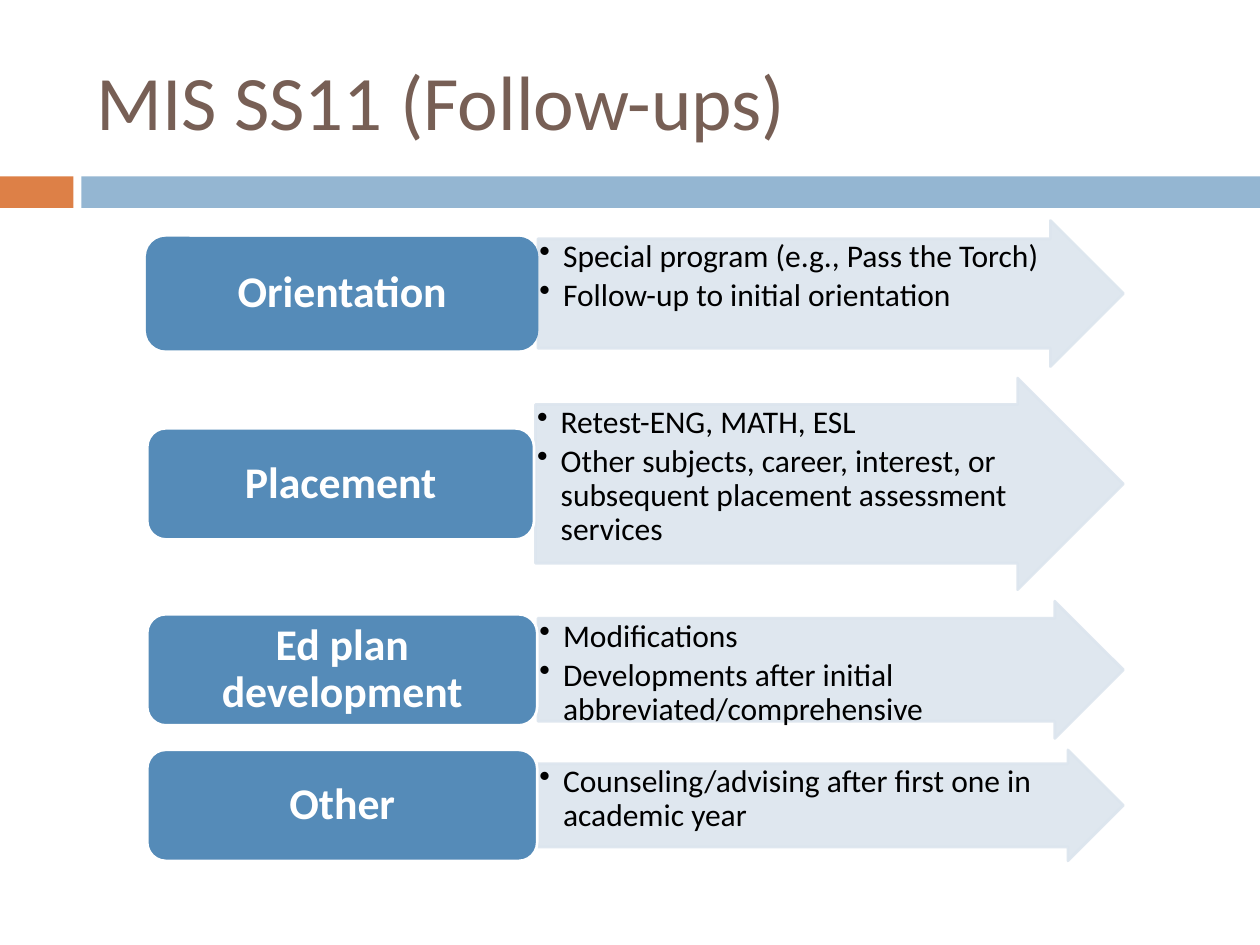
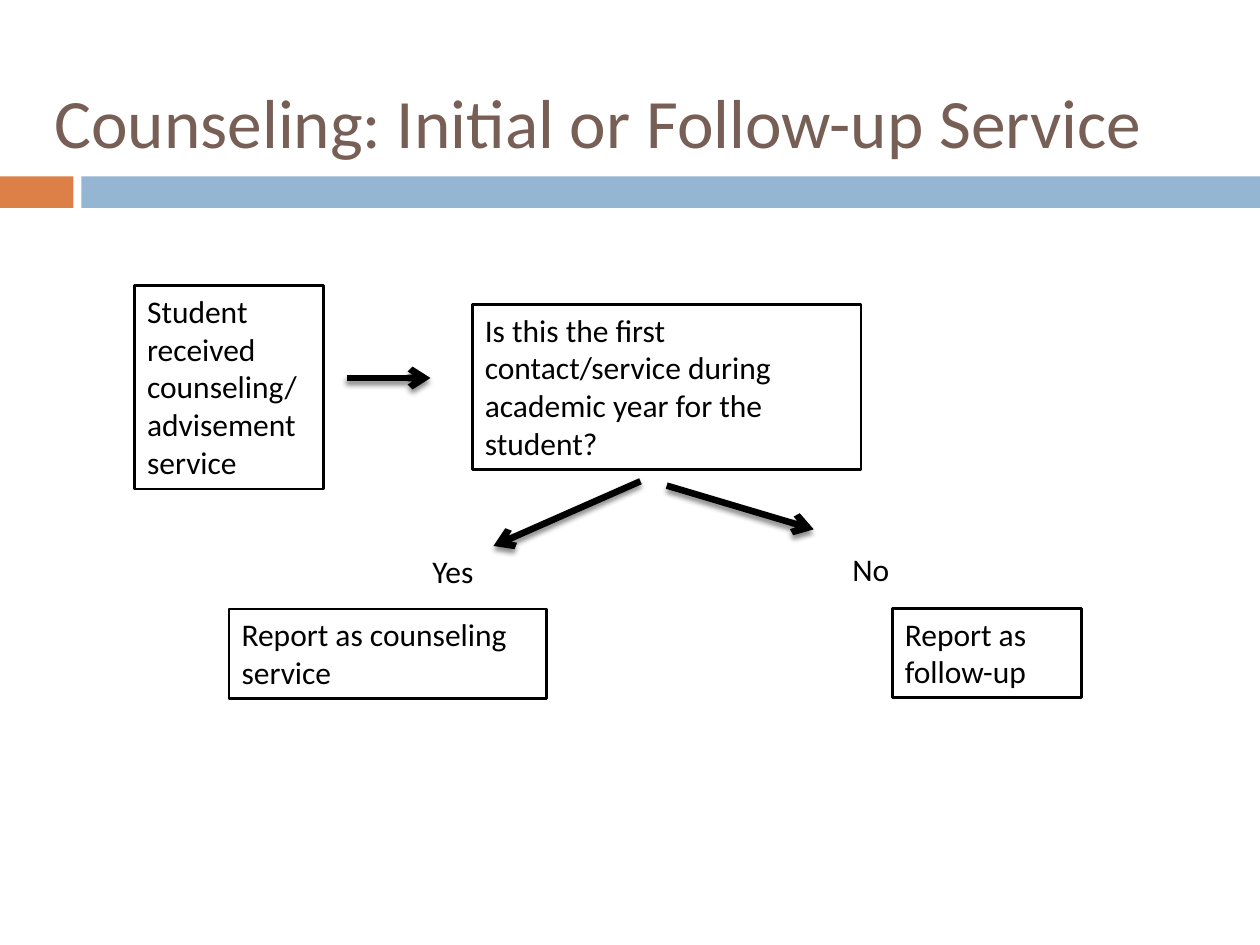
from lxml.etree import SubElement
from pptx import Presentation
from pptx.dml.color import RGBColor
from pptx.enum.shapes import MSO_CONNECTOR as Connector, MSO_SHAPE as Shape
from pptx.enum.text import MSO_ANCHOR as Anchor, PP_ALIGN as Align
from pptx.oxml.ns import qn
from pptx.util import Pt

FONT = "Calibri"
COLORS = {
    "title": "775F55", "accent": "DD8047", "band": "94B6D2",
    "label": "558BB8", "arrow": "DCE5EE", "white": "FFFFFF", "black": "000000",
}
TITLE = {"size": 44, "color": "title"}
BODY = {"size": 18, "color": "black"}
LABEL = {"size": 25, "color": "white", "bold": True}

ROW_LEFT, ROW_RIGHT, ROW_TOP, ROW_GAP = 84.2, 642, 126, 6.5
LABEL_HEIGHT = 63.4
# label, label width, label outline, arrow left, arrow height, details
FOLLOW_UPS = [
    ("Orientation", 222.7, "label", 307.4, 83.5,
     ["Special program (e.g., Pass the Torch)", "Follow-up to initial orientation"]),
    ("Placement", 221, "white", 306, 121,
     ["Retest-ENG, MATH, ESL",
      "Other subjects, career, interest, or subsequent placement assessment services"]),
    ("Ed plan development", 222.8, "white", 307.4, 78.5,
     ["Modifications", "Developments after initial abbreviated/comprehensive"]),
    ("Other", 222.8, "white", 307.4, 63.4,
     ["Counseling/advising after first one in academic year"]),
]
# box in points, paragraphs
DECISION_BOXES = [
    ((77, 163.2, 108, 116.4), ["Student received counseling/", "advisement service"]),
    ((270, 174, 222, 94.5),
     ["Is this the first contact/service during academic year for the student?"]),
    ((131, 348, 181.2, 51), ["Report as counseling service"]),
    ((510, 347.6, 108, 51), ["Report as follow-up"]),
]
ANSWERS = [((240, 312, 84, 29), "Yes"), ((480, 311, 84, 29), "No")]
FLOW_ARROWS = [(198, 216, 246, 216), (366, 275, 282, 312), (381, 277.5, 465, 302.5)]


def color(name):
    return RGBColor.from_string(COLORS[name])


def set_attributes(target, values):
    for name, value in values.items():
        setattr(target, name, value)


def write(shape, texts, style, inset=(7.2, 3.6), anchor=Anchor.TOP, **paragraph_format):
    """Fill a shape with paragraphs of one style and return them."""
    frame = shape.text_frame
    across, down = map(Pt, inset)
    set_attributes(frame, {
        "word_wrap": True, "vertical_anchor": anchor,
        "margin_left": across, "margin_right": across,
        "margin_top": down, "margin_bottom": down,
    })
    for index, text in enumerate(texts):
        paragraph = frame.paragraphs[0] if index == 0 else frame.add_paragraph()
        set_attributes(paragraph, {"alignment": Align.LEFT, **paragraph_format})
        run = paragraph.add_run()
        run.text = text
        set_attributes(run.font, {
            "name": FONT, "size": Pt(style["size"]), "bold": style.get("bold", False)})
        run.font.color.rgb = color(style["color"])
    return frame.paragraphs


def add_block(slide, kind, box, fill, outline=None):
    shape = slide.shapes.add_shape(kind, *map(Pt, box))
    shape.shadow.inherit = False
    shape.fill.solid()
    shape.fill.fore_color.rgb = color(fill)
    if outline:
        shape.line.color.rgb = color(outline)
        shape.line.width = Pt(1.5)
    else:
        shape.line.fill.background()
    return shape


def add_text(slide, box, text, style, **options):
    write(slide.shapes.add_textbox(*map(Pt, box)), [text], style, **options)


def add_titled_slide(presentation, title, box, size=44):
    """Blank slide with the two-part band and a title above it."""
    slide = presentation.slides.add_slide(presentation.slide_layouts[6])
    add_block(slide, Shape.RECTANGLE, (0, 100.8, 42, 18), "accent")
    add_block(slide, Shape.RECTANGLE, (46.5, 100.8, 673.5, 18), "band")
    add_text(slide, box, title, {**TITLE, "size": size}, anchor=Anchor.MIDDLE)
    return slide


def add_bullet(paragraph, indent=13.5):
    properties = paragraph._p.get_or_add_pPr()
    properties.set("marL", str(Pt(indent)))
    properties.set("indent", str(-Pt(indent)))
    SubElement(properties, qn("a:buChar"), char="•")


def add_detail_arrow(slide, box, details):
    arrow = add_block(slide, Shape.RIGHT_ARROW, box, "arrow", "arrow")
    arrow.adjustments[0], arrow.adjustments[1] = 0.75, 0.5
    for rgb in list(arrow._element.spPr.iter(qn("a:srgbClr"))):
        SubElement(rgb, qn("a:alpha"), val="90000")
    for paragraph in write(arrow, details, BODY, inset=(0.9, 0.9),
                           line_spacing=0.9, space_after=Pt(2.8)):
        add_bullet(paragraph)


def add_label(slide, box, text, outline):
    label = add_block(slide, Shape.ROUNDED_RECTANGLE, box, "label", outline)
    write(label, [text], LABEL, inset=(10.3, 6.6), anchor=Anchor.MIDDLE,
          alignment=Align.CENTER, line_spacing=0.9)


def add_flow_arrow(slide, ends):
    connector = slide.shapes.add_connector(Connector.STRAIGHT, *map(Pt, ends))
    connector.line.color.rgb = color("black")
    connector.line.width = Pt(3.75)
    SubElement(connector.line._get_or_add_ln(), qn("a:tailEnd"), type="arrow")
    # soft shadow straight below
    effects = SubElement(connector._element.spPr, qn("a:effectLst"))
    shadow = SubElement(effects, qn("a:outerShdw"), blurRad=str(Pt(3)),
                        dist=str(Pt(2.4)), dir="5400000", rotWithShape="0")
    rgb = SubElement(shadow, qn("a:srgbClr"), val=COLORS["black"])
    SubElement(rgb, qn("a:alpha"), val="45000")


def build_follow_ups(presentation):
    slide = add_titled_slide(presentation, "MIS SS11 (Follow-ups)", (48, 18, 642, 78))
    top = ROW_TOP
    for text, width, outline, arrow_left, height, details in FOLLOW_UPS:
        add_detail_arrow(slide, (arrow_left, top, ROW_RIGHT - arrow_left, height), details)
        label_top = top + (height - LABEL_HEIGHT) / 2
        add_label(slide, (ROW_LEFT, label_top, width, LABEL_HEIGHT), text, outline)
        top += height + ROW_GAP


def build_decision(presentation):
    slide = add_titled_slide(presentation, "Counseling: Initial or Follow-up Service",
                             (24, 30, 648, 78), size=39.6)
    for box, texts in DECISION_BOXES:
        write(add_block(slide, Shape.RECTANGLE, box, "white", "black"), texts, BODY)
    for ends in FLOW_ARROWS:
        add_flow_arrow(slide, ends)
    for box, answer in ANSWERS:
        add_text(slide, box, answer, BODY)


def main():
    presentation = Presentation()
    set_attributes(presentation, {"slide_width": Pt(720), "slide_height": Pt(540)})
    build_follow_ups(presentation)
    build_decision(presentation)
    presentation.save("out.pptx")


if __name__ == "__main__":
    main()
